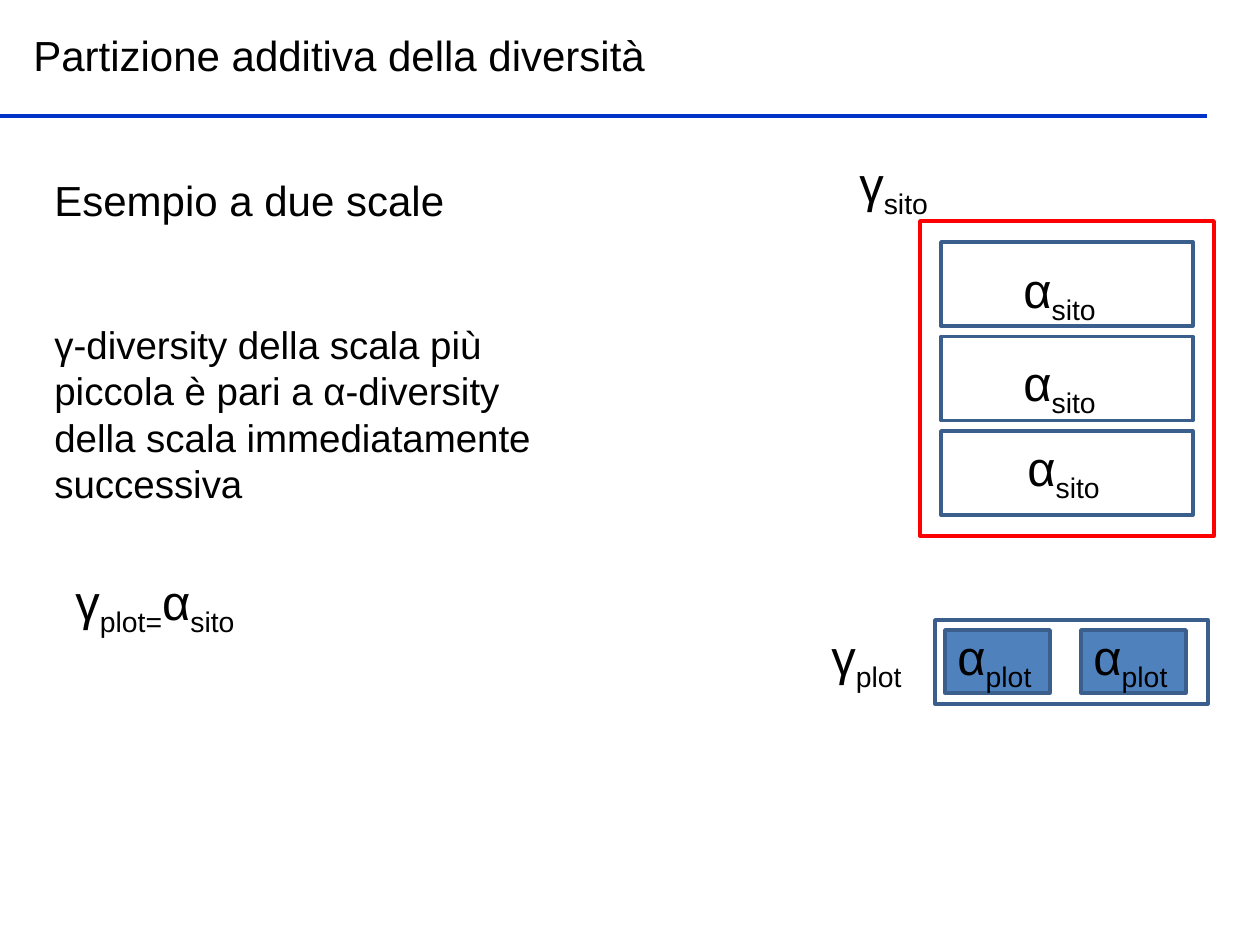
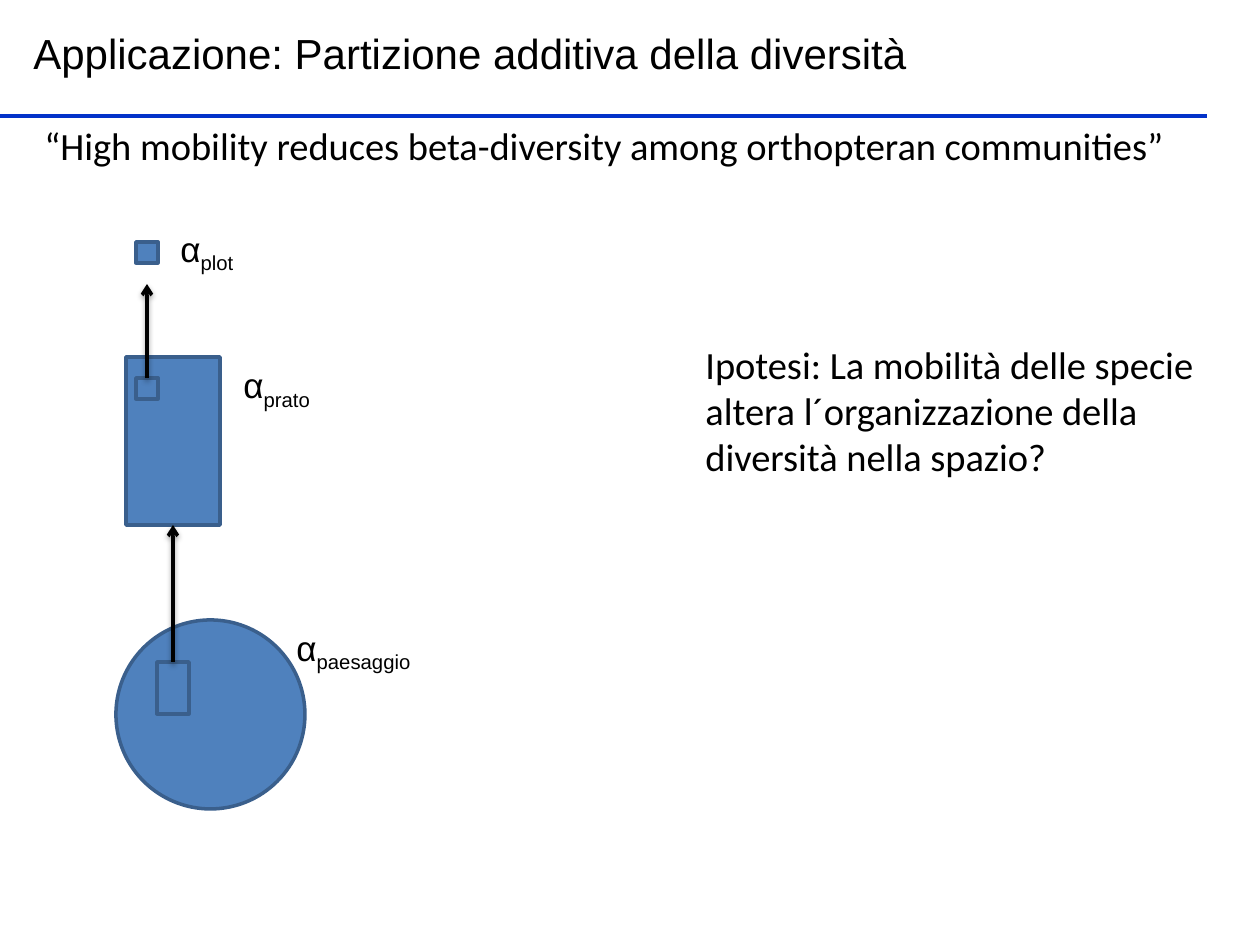
from lxml import etree
from pptx import Presentation
from pptx import util as u
from pptx.dml.color import RGBColor
from pptx.enum import shapes, text
from pptx.oxml import parse_xml
from pptx.oxml.ns import nsdecls, qn

PX = 914400 / 126
BLACK = RGBColor(0, 0, 0)
RED = RGBColor(0xFF, 0, 0)
RULE_BLUE = RGBColor(0x03, 0x32, 0xC9)
FILL_BLUE = RGBColor(0x4F, 0x81, 0xBD)
EDGE_BLUE = RGBColor(0x3A, 0x5F, 0x8C)
RECT = shapes.MSO_SHAPE.RECTANGLE
MIDDLE = text.MSO_ANCHOR.MIDDLE
ARROW_SHADOW = (
    f'<a:effectLst {nsdecls("a")}>'
    '<a:outerShdw blurRad="40000" dist="20000" dir="5400000" rotWithShape="0">'
    '<a:srgbClr val="000000"><a:alpha val="38000"/></a:srgbClr>'
    '</a:outerShdw></a:effectLst>'
)


def write(slide, box, pieces, size, font="Arial", anchor=text.MSO_ANCHOR.TOP, wrap=True):
    frame = slide.shapes.add_textbox(*[round(n * PX) for n in box]).text_frame
    frame.word_wrap = wrap
    frame.auto_size = text.MSO_AUTO_SIZE.SHAPE_TO_FIT_TEXT
    frame.vertical_anchor = anchor
    for place, piece in enumerate(pieces):
        run = frame.paragraphs[0].add_run()
        run.text = piece
        run.font.size = u.Pt(size)
        run.font.name = font
        run.font.color.rgb = BLACK
        if place % 2:
            run._r.get_or_add_rPr().set("baseline", "-25000")


def draw(slide, box, fill=None, edge=EDGE_BLUE, kind=RECT):
    figure = slide.shapes.add_shape(kind, *[round(n * PX) for n in box])
    figure.shadow.inherit = False
    if fill is None:
        figure.fill.background()
    else:
        figure.fill.solid()
        figure.fill.fore_color.rgb = fill
    figure.line.color.rgb = edge
    figure.line.width = u.Pt(2)
    return figure


deck = Presentation()
deck.slide_width = u.Inches(10)
deck.slide_height = u.Inches(7.5)

titles = [
    ("Partizione additiva della diversità", (21, 23, 1071, 63)),
    ("Applicazione: Partizione additiva della diversità", (21, 21, 1270, 63)),
]
for title, box in titles:
    slide = deck.slides.add_slide(deck.slide_layouts[6])
    write(slide, box, [title], 24, anchor=MIDDLE)
    rule = slide.shapes.add_connector(
        shapes.MSO_CONNECTOR.STRAIGHT, 0, round(116 * PX), round(1207 * PX), round(116 * PX))
    rule.line.color.rgb = RULE_BLUE
    rule.line.width = u.Pt(2)
    etree.SubElement(rule._element.spPr, qn("a:effectLst"))

scales, application = deck.slides

write(scales, (42, 168, 1071, 63), ["Esempio a due scale"], 24, anchor=MIDDLE)
write(scales, (42, 315, 546, 199),
      ["γ-diversity della scala più piccola è pari a α-diversity "
       "della scala immediatamente successiva"], 22)
write(scales, (63, 565, 273, 171), ["γ", "plot=", "α", "sito"], 28)

draw(scales, (920, 221, 294, 315), edge=RED)
write(scales, (847, 147, 193, 131), ["γ", "sito"], 28)
for row, (left, top) in enumerate([(1011, 253), (1011, 346), (1015, 431)]):
    draw(scales, (941, 242 + row * 94.5, 252, 84))
    write(scales, (left, top, 106, 72), ["α", "sito"], 28, wrap=False)

draw(scales, (935, 620, 273, 84))
write(scales, (819, 620, 193, 131), ["γ", "plot"], 28)
for left in (945, 1081):
    draw(scales, (left, 630, 105, 63), FILL_BLUE)
    write(scales, (left, 620, 193, 131), ["α", "plot"], 28)

write(application, (32, 116, 1260, 59),
      ["“High mobility reduces beta-diversity among orthopteran communities”"],
      22, "Calibri", MIDDLE)
write(application, (693, 334, 567, 152),
      ["Ipotesi: La mobilità delle specie altera l´organizzazione della "
       "diversità nella spazio?"], 22, "Calibri", MIDDLE)

draw(application, (136, 242, 22, 21), FILL_BLUE)
meadow = draw(application, (126, 357, 94, 168), FILL_BLUE)
draw(application, (116, 620, 189, 189), FILL_BLUE, kind=shapes.MSO_SHAPE.OVAL)
plot_in_meadow = draw(application, (136, 378, 22, 21), FILL_BLUE)
meadow_in_landscape = draw(application, (157, 662, 32, 52), FILL_BLUE)

for left, top, scale in [(168, 221, "plot"), (231, 357, "prato"), (284, 620, "paesaggio")]:
    write(application, (left, top, 189, 55), ["α", scale], 20)

for part, whole, x, start, end in [
    (plot_in_meadow, None, 147, 378, 284),
    (meadow_in_landscape, meadow, 173, 662, 525),
]:
    zoom = application.shapes.add_connector(
        shapes.MSO_CONNECTOR.STRAIGHT, *[round(n * PX) for n in (x, start, x, end)])
    zoom.begin_connect(part, 0)
    if whole is not None:
        zoom.end_connect(whole, 2)
    zoom.line.color.rgb = BLACK
    zoom.line.width = u.Pt(2)
    etree.SubElement(zoom.line._get_or_add_ln(), qn("a:tailEnd")).set("type", "arrow")
    zoom._element.spPr.append(parse_xml(ARROW_SHADOW))

deck.save("out.pptx")
